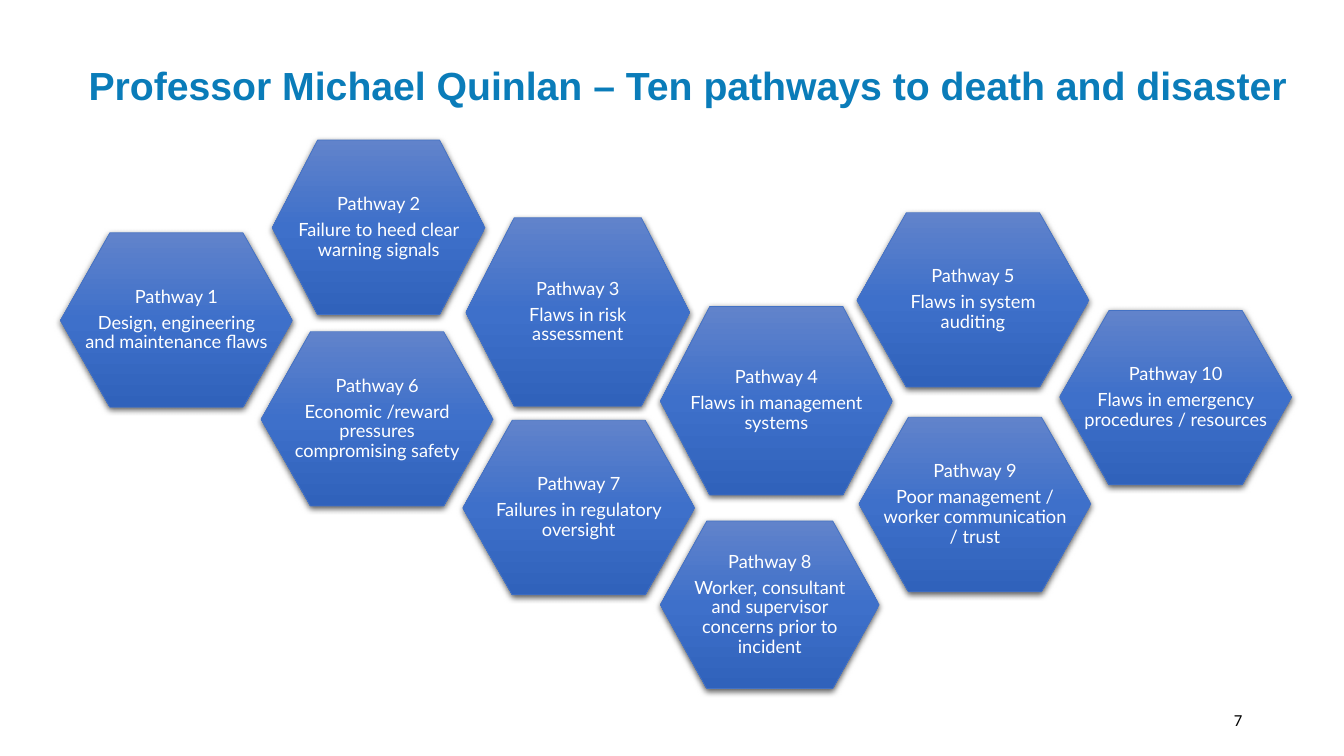
from pptx import Presentation
from pptx.dml.color import RGBColor as Rgb
from pptx.enum.text import MSO_ANCHOR as Anchor, PP_ALIGN as Align
from pptx.oxml import parse_xml as to_xml
from pptx.oxml.ns import nsdecls
from pptx.util import Pt

PX = 9144  # EMU in one px, 100 px to the inch
NOTCH = 0.214  # corner inset as a share of the width
BLUE, EDGE, WHITE, BLACK = "0A7CB9", "4472C4", "FFFFFF", "000000"
STOPS = [(0, "6183CB"), (50, "3E70CA"), (100, "3062BB")]

# left, top, width, height, text; numbered from 1
PATHS = [
    (60, 231, 230, 173, "Design, engineering and maintenance flaws"),
    (270, 139, 211, 173, "Failure to heed clear warning signals"),
    (462, 216, 222, 187, "Flaws in risk assessment"),
    (655, 304, 230, 187, "Flaws in management systems"),
    (850, 211, 230, 173, "Flaws in system auditing"),
    (259, 329, 230, 173, "Economic /reward pressures compromising safety"),
    (459, 417, 230, 173, "Failures in regulatory oversight"),
    (655, 517, 217, 166,
     "Worker, consultant and supervisor concerns prior to incident"),
    (852, 414, 230, 173, "Poor management / worker communication / trust"),
    (1051, 308, 230, 173, "Flaws in emergency procedures / resources"),
]


def color(code):
    return Rgb.from_string(code)


def style(part, font, size, ink, bold=False):
    for run in part.runs:
        run.font.name = font
        run.font.size = Pt(size)
        run.font.bold = bold
        run.font.color.rgb = color(ink)


def label(slide, box, text, font, size, ink, align, bold=False):
    frame = slide.shapes.add_textbox(*(n * PX for n in box)).text_frame
    frame.word_wrap = True
    frame.vertical_anchor = Anchor.MIDDLE
    frame.text = text
    part = frame.paragraphs[0]
    part.alignment = align
    part.line_spacing = 0.9
    style(part, font, size, ink, bold)


def paint(shape):
    """Give a shape the shaded fill, thin edge and soft shadow."""
    stops = "".join(
        f'<a:gs pos="{pos * 1000}"><a:srgbClr val="{code}"/></a:gs>'
        for pos, code in STOPS)
    props = shape._element.spPr
    props.append(to_xml(
        f'<a:gradFill {nsdecls("a")} rotWithShape="1"><a:gsLst>{stops}'
        '</a:gsLst><a:lin ang="5400000" scaled="0"/></a:gradFill>'))
    shape.line.color.rgb = color(EDGE)
    shape.line.width = Pt(0.5)
    props.append(to_xml(
        f'<a:effectLst {nsdecls("a")}><a:outerShdw blurRad="57150" '
        'dist="19050" dir="5400000" algn="ctr" rotWithShape="0">'
        f'<a:srgbClr val="{BLACK}"><a:alpha val="63000"/></a:srgbClr>'
        '</a:outerShdw></a:effectLst>'))


def hexagon(slide, x, y, w, h, lines):
    cut, mid = round(w * NOTCH), y + h / 2
    pen = slide.shapes.build_freeform(x, mid, scale=PX)
    pen.add_line_segments([
        (x + cut, y), (x + w - cut, y), (x + w, mid),
        (x + w - cut, y + h), (x + cut, y + h)], close=True)
    shape = pen.convert_to_shape()
    paint(shape)

    # Text
    frame = shape.text_frame
    frame.word_wrap = True
    frame.vertical_anchor = Anchor.MIDDLE
    frame.margin_left = frame.margin_right = 23 * PX
    frame.margin_top = frame.margin_bottom = 21 * PX
    frame.text = "\n".join(lines)
    for part in frame.paragraphs:
        part.alignment = Align.CENTER
        part.line_spacing = 0.9
        part.space_after = Pt(4.5)
        style(part, "Lato", 13, WHITE)


def main():
    deck = Presentation()
    deck.slide_width, deck.slide_height = 1333 * PX, 750 * PX
    slide = deck.slides.add_slide(deck.slide_layouts[6])

    # Title
    label(slide, (78, 50, 1219, 75),
          "Professor Michael Quinlan – Ten pathways to death and disaster",
          "Arial", 28, BLUE, Align.LEFT, bold=True)

    # Pathways
    for num, (x, y, w, h, text) in enumerate(PATHS, 1):
        hexagon(slide, x, y, w, h, [f"Pathway {num}", text])

    # Page number
    label(slide, (942, 695, 300, 40), "7", "Calibri", 12, BLACK, Align.RIGHT)

    deck.save("out.pptx")


if __name__ == "__main__":
    main()
